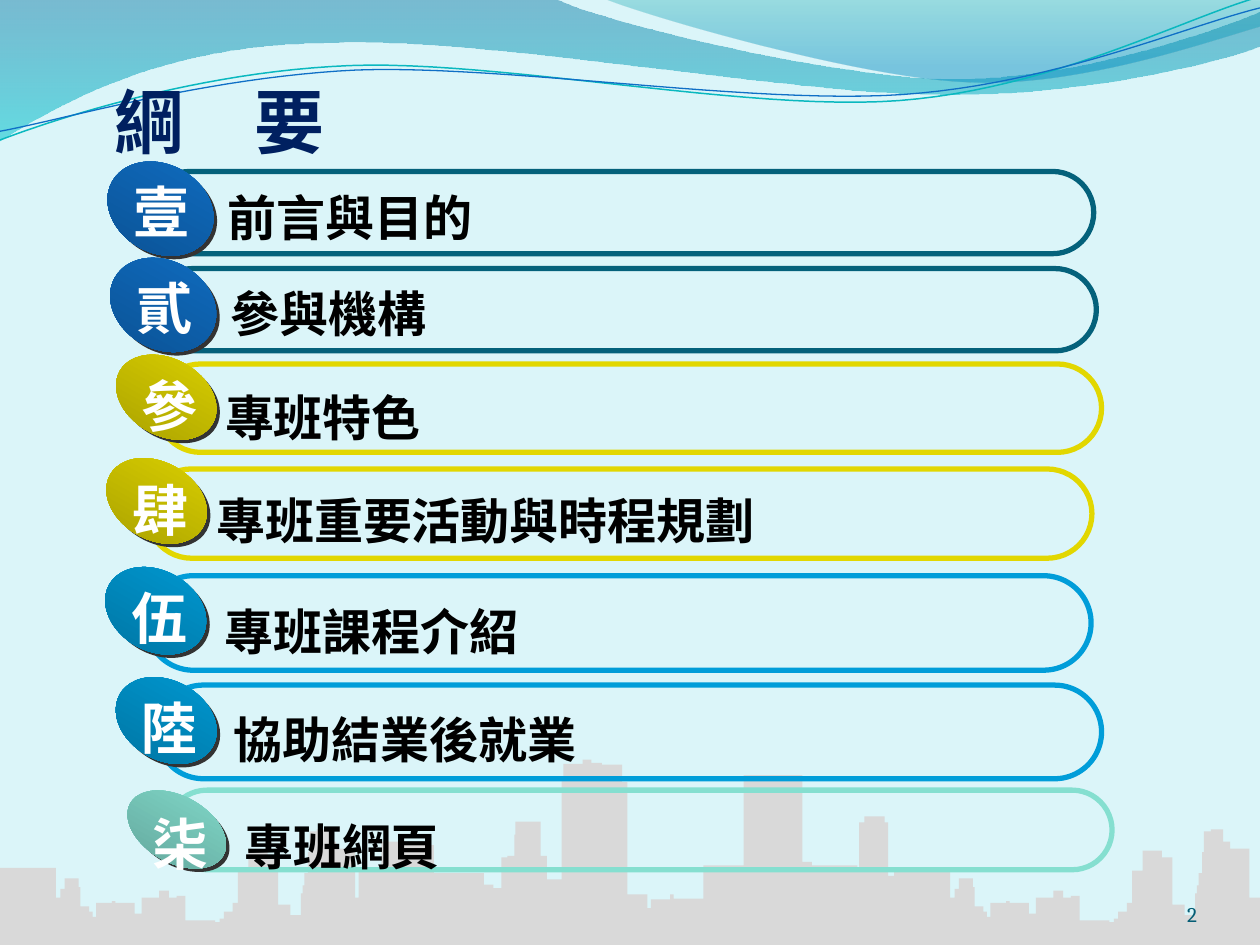
from pptx import Presentation
from pptx.dml.color import RGBColor
from pptx.enum import shapes, text
from pptx.oxml import ns
from pptx.util import Pt
from lxml import etree

W, H = 720, 540
COLORS = {
    "sky": "DBF5F9", "city": "D9D9D9", "title": "002060", "page": "045D75",
    "black": "000000", "white": "FFFFFF", "shade": "333333",
    "deep": "0074A1", "cyan": "00C6CF", "teal": "00A1A9", "azure": "008BBF",
    "line_teal": "0AB8BF", "line_blue": "0F6FC6",
}
# Bar line, badge gradient start, badge gradient end
THEMES = {
    "navy": ("04617B", "0F6FC6", "0B4F8E"),
    "olive": ("E2D700", "E2D700", "A29A00"),
    "blue": ("009DD9", "009DD9", "00709B"),
    "mint": ("85DFD0", "85DFD0", "5FA095"),
}
CJK = "Noto Sans CJK SC"
BAR_W = 540

# Numeral, label, theme, bar (left, top, height), badge (top, width, height),
# label box (left, top, width, height), numeral box height
ROWS = [
    ("壹", "前言與目的", "navy", (85, 98, 47), (94, 63.5, 50.5), (123, 103.5, 156, 41), 45.5),
    ("貳", "參與機構", "navy", (86.5, 153.5, 47), (149, 63.5, 50.5), (124.5, 158.5, 127.5, 41), 46),
    ("參", "專班特色", "olive", (89.5, 208, 50.5), (205, 61, 44), (121.5, 218, 494.5, 35), 40),
    ("肆", "專班重要活動與時程規劃", "olive", (84, 268, 51), (264, 61, 44.5), (116.5, 277, 494.5, 36), 40),
    ("伍", "專班課程介紹", "blue", (83.5, 329, 54), (326, 61, 46), (121.5, 340, 490, 49), 55),
    ("陸", "協助結業後就業", "blue", (89.5, 391.5, 53.5), (389, 61, 45.5), (126.5, 402, 490, 48), 54),
    ("柒", "專班網頁", "mint", (95.5, 451.5, 45.5), (455, 61, 38), (132.5, 463, 493, 31), 46),
]

# Skyline: each pair is where a roof starts and its height on the slide
BLOCK = [
    (0, 496), (32, 513), (34.5, 508), (37, 502), (45, 507), (46, 518), (51, 521),
    (53, 524), (55, 516), (64, 515), (66, 516), (77, 522), (81, 513), (91, 509),
    (96.5, 513), (101, 512), (106, 526), (123, 527), (125.5, 525), (128, 521),
    (133, 516), (136, 497.5), (142, 486), (153, 490), (159, 517), (166, 523),
    (172, 510.5), (173, 506), (174, 499), (176, 487), (177, 475), (181, 474),
    (188, 481), (192, 485), (203, 513),
]
DOWNTOWN = [
    (205, 497.5), (218, 481), (230, 483), (248, 499), (276.5, 505.5), (282, 507.5),
    (286.5, 490), (290, 489), (294, 477), (294.5, 469.5), (309, 489), (312.5, 502.5),
    (321, 444), (322, 436.5), (333, 434), (338, 436), (344, 437), (355.5, 447),
    (358.5, 511), (370, 519), (372, 514), (383, 511), (385, 513.5), (402, 494.5),
    (425, 443), (458.5, 492.5), (464, 494.5), (490, 497), (491, 470), (494, 466.5),
    (505.5, 470), (507.5, 500.5),
]
BLOCK_SHIFT = 511

# Waves: pairs are corners, sextuples are cubic curves
WAVE_WIDE = [
    (0, -1), (317, -1), (343, 12, 478, 45, 546, 45), (614, 45, 690, 19, 720, 6.5),
    (720.7, 26), (708, 32, 626, 55, 537, 54), (448, 54, 275, 20, 185, 24.5),
    (93, 25, 33, 60, -0.7, 81),
]
WAVE_RIGHT = [(345, -1), (366, 8, 491, 45, 554, 47), (616, 50, 692, 23, 720, 15), (720, 0)]
LINE_TEAL = [
    (0, 80), (34.5, 67, 114, 41, 199.5, 37.5), (284.5, 34, 427, 64, 513.5, 57.5),
    (600, 51, 675.5, 11, 718.5, -1.5),
]
LINE_BLUE = [
    (0, 75), (34, 69, 118, 44, 204, 40), (290, 37, 430, 60, 516, 54),
    (602, 48, 677.5, 15, 720, 4.5),
]


def rgb(value):
    return RGBColor.from_string(value)


def trace(segments, steps=24):
    """Turn corners and cubic curves into a list of points."""
    points = []
    for seg in segments:
        if len(seg) == 2:
            points.append(seg)
            continue
        ctrl = [points[-1], seg[:2], seg[2:4], seg[4:]]
        for i in range(1, steps + 1):
            t = i / steps
            weights = ((1 - t) ** 3, 3 * t * (1 - t) ** 2, 3 * t * t * (1 - t), t ** 3)
            points.append(tuple(sum(w * c[k] for w, c in zip(weights, ctrl)) for k in (0, 1)))
    return points


def paint(sp, fill=None, line=None, weight=1):
    sp.shadow.inherit = False
    if fill:
        sp.fill.solid()
        sp.fill.fore_color.rgb = rgb(fill)
    else:
        sp.fill.background()
    if line:
        sp.line.color.rgb = rgb(line)
        sp.line.width = Pt(weight)
    else:
        sp.line.fill.background()


def add_gradient(sp, *stops):
    """Fill from top to bottom; a stop is (position, colour, opacity in percent)."""
    sp.fill.gradient()
    sp.fill.gradient_angle = 270
    for stop, (position, color, _) in zip(sp.fill.gradient_stops, stops):
        stop.position = position
        stop.color.rgb = rgb(color)
    colors = list(sp._element.spPr.iter(ns.qn("a:srgbClr")))
    for clr, (_, _, opacity) in zip(colors, stops):
        if opacity < 100:
            etree.SubElement(clr, ns.qn("a:alpha"), val=str(opacity * 1000))


def add_outline(s, points, closed=True, **look):
    builder = s.shapes.build_freeform(Pt(points[0][0]), Pt(points[0][1]))
    builder.add_line_segments([(Pt(x), Pt(y)) for x, y in points[1:]], close=closed)
    sp = builder.convert_to_shape()
    paint(sp, **look)
    return sp


def add_preset(s, kind, left, top, width, height, rotation=0, **look):
    sp = s.shapes.add_shape(kind, Pt(left), Pt(top), Pt(width), Pt(height))
    sp.rotation = rotation
    paint(sp, **look)
    return sp


def add_text(s, words, box, size, color, font=CJK, bold=True, align="LEFT",
             anchor="TOP", insets=(7.2, 3.6, 7.2, 3.6)):
    tf = s.shapes.add_textbox(*map(Pt, box)).text_frame
    left, top, right, bottom = map(Pt, insets)
    frame = {"word_wrap": True, "vertical_anchor": text.MSO_ANCHOR[anchor],
             "margin_left": left, "margin_top": top,
             "margin_right": right, "margin_bottom": bottom}
    for name, value in frame.items():
        setattr(tf, name, value)
    p = tf.paragraphs[0]
    p.alignment = text.PP_ALIGN[align]
    r = p.add_run()
    r.text = words
    for name, value in {"name": font, "size": Pt(size), "bold": bold}.items():
        setattr(r.font, name, value)
    r.font.color.rgb = rgb(COLORS[color])
    etree.SubElement(r._r.get_or_add_rPr(), ns.qn("a:ea"), typeface=CJK)


def add_skyline(s):
    roofs = BLOCK + DOWNTOWN + [(x + BLOCK_SHIFT, y) for x, y in BLOCK]
    points, level = [], H
    for x, y in roofs:
        points += [(x, level), (x, y)]
        level = y
    add_outline(s, points + [(W, level), (W, H)], fill=COLORS["city"])


def add_row(s, numeral, label, theme, bar, badge, label_box, numeral_h):
    line, start, end = THEMES[theme]
    left, top, height = bar
    badge_top, badge_w, badge_h = badge
    badge_left = left - 25
    pill = add_preset(s, shapes.MSO_SHAPE.ROUNDED_RECTANGLE, left, top, BAR_W, height,
                      line=line, weight=3)
    pill.adjustments[0] = 0.5
    # Tilted badge over its offset shade
    oval = shapes.MSO_SHAPE.OVAL
    add_preset(s, oval, badge_left + 2, badge_top + 2, badge_w, badge_h, 29.3,
               fill=COLORS["shade"])
    face = add_preset(s, oval, badge_left, badge_top, badge_w, badge_h, 29.3)
    add_gradient(face, (0, start, 100), (1, end, 100))
    add_text(s, label, label_box, 28, "black")
    add_text(s, numeral, (badge_left + 9, badge_top + 4, 47, numeral_h), 32, "white",
             align="CENTER")


def main():
    prs = Presentation()
    prs.slide_width, prs.slide_height = Pt(W), Pt(H)
    s = prs.slides.add_slide(prs.slide_layouts[6])
    s.background.fill.solid()
    s.background.fill.fore_color.rgb = rgb(COLORS["sky"])

    # Waves and skyline
    wide = add_outline(s, trace(WAVE_WIDE))
    add_gradient(wide, (0, COLORS["deep"], 45), (1, COLORS["cyan"], 55))
    right = add_outline(s, trace(WAVE_RIGHT))
    add_gradient(right, (0, COLORS["teal"], 30), (0.8, COLORS["azure"], 45))
    add_outline(s, trace(LINE_TEAL), closed=False, line=COLORS["line_teal"], weight=0.85)
    add_outline(s, trace(LINE_BLUE), closed=False, line=COLORS["line_blue"], weight=0.75)
    add_skyline(s)

    # Title and page number
    add_text(s, "綱　要", (65.5, 21, 366, 72), 40, "title", font="Calibri",
             anchor="BOTTOM", insets=(0, 3.6, 0, 0))
    add_text(s, "2", (624, 500.5, 60, 29), 12, "page", font="Cambria", bold=False,
             align="RIGHT", anchor="BOTTOM", insets=(0, 0, 0, 0))

    # Agenda
    for row in ROWS:
        add_row(s, *row)
    prs.save("out.pptx")


if __name__ == "__main__":
    main()
